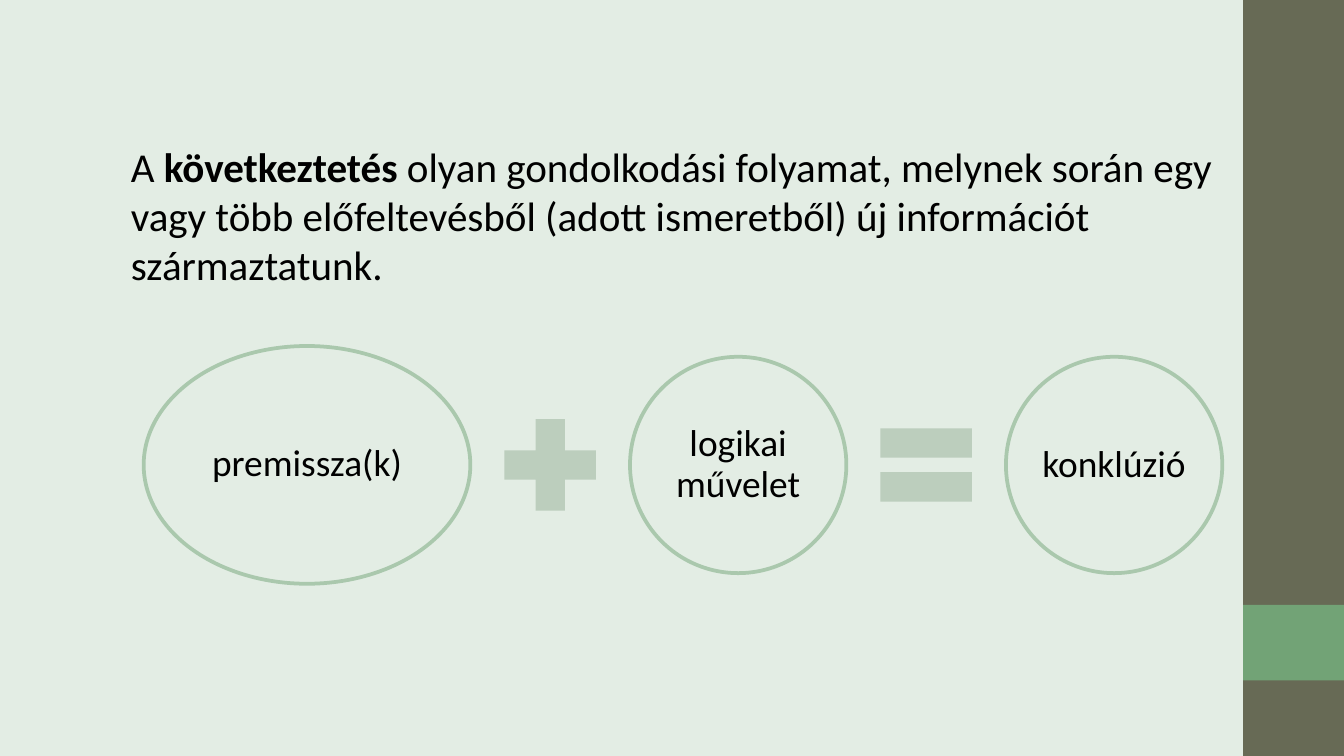
from pptx import Presentation
from pptx.dml.color import RGBColor
from pptx.enum import shapes, text
from pptx.util import Pt

MINT = RGBColor(0xE3, 0xED, 0xE4)
OLIVE = RGBColor(0x67, 0x6A, 0x55)
GREEN = RGBColor(0x72, 0xA3, 0x76)
RING = RGBColor(0xAA, 0xC8, 0xAD)
SIGN = RGBColor(0xBC, 0xCE, 0xBD)
BLACK = RGBColor(0, 0, 0)

KIND = shapes.MSO_SHAPE
LEFT, MID, GAP = 77, 249.1, 9.4


def write(shape, runs, size=20, align=text.PP_ALIGN.CENTER,
          anchor=text.MSO_ANCHOR.MIDDLE, inset=(2, 2), line=0.9,
          before=0, after=0):
    frame = shape.text_frame
    frame.word_wrap = True
    frame.vertical_anchor = anchor
    frame.margin_left = frame.margin_right = Pt(inset[0])
    frame.margin_top = frame.margin_bottom = Pt(inset[1])
    para = frame.paragraphs[0]
    para.alignment = align
    para.line_spacing = line
    para.space_before, para.space_after = Pt(before), Pt(after)
    for words, bold in runs:
        run = para.add_run()
        run.text = words
        font = run.font
        font.name, font.size, font.bold = "Calibri", Pt(size), bold
        font.color.rgb = BLACK


def shape(slide, kind, x, y, w, h, fill=None, line=None):
    item = slide.shapes.add_shape(kind, Pt(x), Pt(y), Pt(w), Pt(h))
    item.shadow.inherit = False
    if fill is None:
        item.fill.background()
    else:
        item.fill.solid()
        item.fill.fore_color.rgb = fill
    if line is None:
        item.line.fill.background()
    else:
        item.line.color.rgb = line
        item.line.width = Pt(2)
    return item


def ring(slide, x, w, h, words):
    oval = shape(slide, KIND.OVAL, x, MID - h / 2, w, h, line=RING)
    write(oval, [(words, False)], after=7)


def sign(slide, x, w, h, kind):
    shape(slide, kind, x, MID - h / 2, w, h, fill=SIGN)


def chain(slide):
    parts = [
        (ring, 175, 127.4, "premissza(k)"),
        (sign, 66.7, 66.7, KIND.MATH_PLUS),
        (ring, 115.9, 115.9, "logikai művelet"),
        (sign, 66.7, 66.7, KIND.MATH_EQUAL),
        (ring, 115.9, 115.9, "konklúzió"),
    ]
    x = LEFT
    for draw, w, h, what in parts:
        draw(slide, x, w, h, what)
        x += w + GAP


def main():
    deck = Presentation()
    deck.slide_width, deck.slide_height = Pt(720), Pt(405)
    slide = deck.slides.add_slide(deck.slide_layouts[6])
    back = slide.background.fill
    back.solid()
    back.fore_color.rgb = MINT
    shape(slide, KIND.RECTANGLE, 666, 0, 54, 405, fill=OLIVE)
    shape(slide, KIND.RECTANGLE, 666, 324, 54, 40.5, fill=GREEN)
    body = slide.shapes.add_textbox(Pt(63), Pt(72), Pt(594), Pt(91))
    write(body, [
        ("A ", False),
        ("következtetés ", True),
        ("olyan gondolkodási folyamat, melynek során egy vagy több "
         "előfeltevésből (adott ismeretből) új információt "
         "származtatunk.", False),
    ], size=22, align=text.PP_ALIGN.LEFT, anchor=text.MSO_ANCHOR.TOP,
        inset=(7.2, 3.6), line=1.0, before=4.4)
    chain(slide)
    deck.save("out.pptx")


if __name__ == "__main__":
    main()
